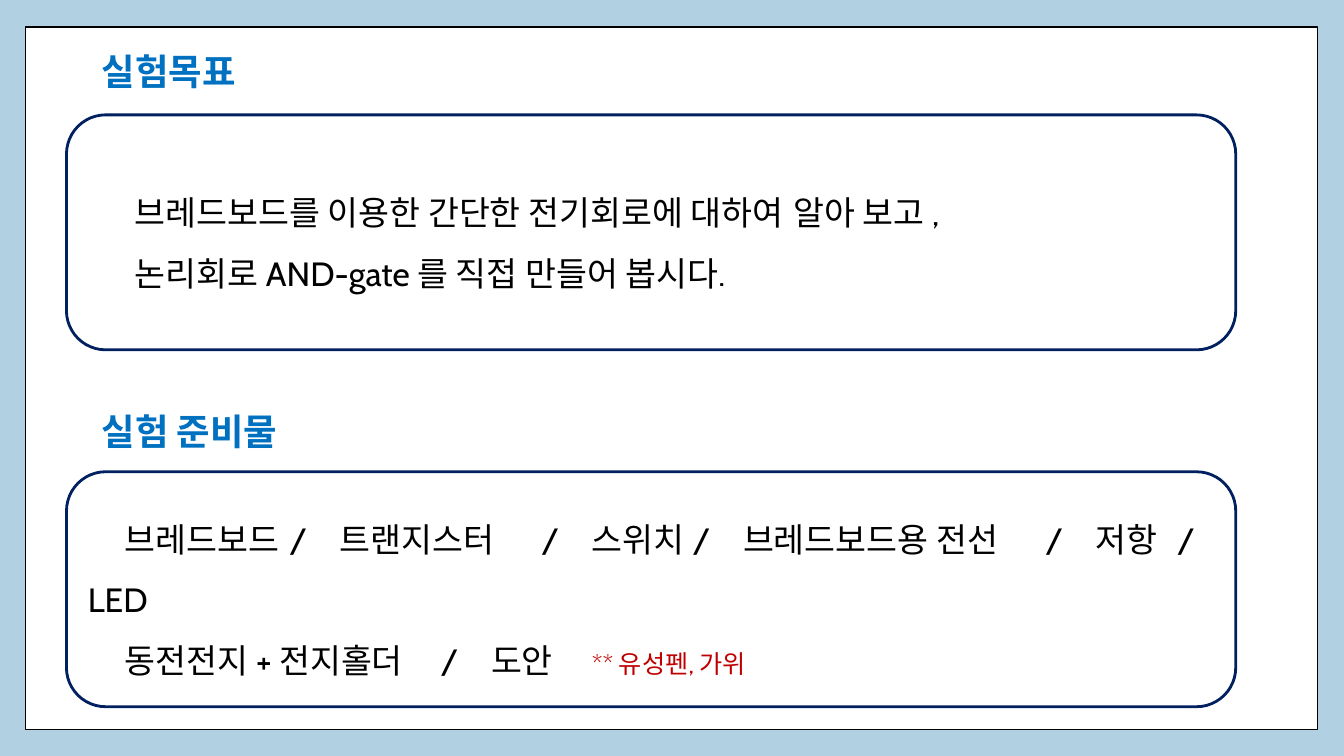
from lxml.etree import SubElement
from pptx import Presentation
from pptx.dml.color import RGBColor
from pptx.enum.shapes import MSO_SHAPE
from pptx.enum.text import MSO_ANCHOR, PP_ALIGN
from pptx.oxml.ns import qn
from pptx.util import Pt


def color(value):
    return RGBColor.from_string(value)


class SlideBuilder:
    font_name = "Cabin"
    heading_format = {"size": Pt(26), "bold": True}
    body_format = {"size": Pt(24)}
    note_format = {"size": Pt(18)}

    def __init__(self, slide):
        self.slide = slide

    def background(self, fill):
        self.slide.background.fill.solid()
        self.slide.background.fill.fore_color.rgb = color(fill)

    def run(self, paragraph, text, font_color, font_format):
        run = paragraph.add_run()
        run.text = text
        run.font.name = self.font_name
        run.font.color.rgb = color(font_color)
        for name, value in font_format.items():
            setattr(run.font, name, value)
        east_asian = SubElement(run.font._element, qn("a:ea"))
        east_asian.set("typeface", self.font_name)

    def box(self, kind, left, top, width, height, line, line_width):
        shape = self.slide.shapes.add_shape(
            kind, Pt(left), Pt(top), Pt(width), Pt(height))
        shape.shadow.inherit = False
        shape.fill.solid()
        shape.fill.fore_color.rgb = color("FFFFFF")
        shape.line.color.rgb = color(line)
        shape.line.width = Pt(line_width)
        return shape

    def heading(self, top, width, text):
        shape = self.slide.shapes.add_textbox(
            Pt(65.5), Pt(top), Pt(width), Pt(34.6))
        frame = shape.text_frame
        frame_format = {"word_wrap": True, "margin_left": Pt(7.2), "margin_right": Pt(7.2),
                        "margin_top": Pt(7.2), "margin_bottom": Pt(7.2)}
        for name, value in frame_format.items():
            setattr(frame, name, value)
        self.run(frame.paragraphs[0], text, "0070C0", self.heading_format)

    def panel(self, top, indent, lines):
        shape = self.box(MSO_SHAPE.ROUNDED_RECTANGLE, 47.5, top, 835.2, 167.8, "002060", 2)
        frame = shape.text_frame
        frame.word_wrap = True
        frame.vertical_anchor = MSO_ANCHOR.MIDDLE
        for index, (text, note, tab_stops) in enumerate(lines):
            paragraph = frame.add_paragraph() if index else frame.paragraphs[0]
            paragraph.alignment = PP_ALIGN.LEFT
            paragraph.line_spacing = 1.5
            self.indent(paragraph, indent, tab_stops)
            self.run(paragraph, text, "000000", self.body_format)
            if note:
                self.run(paragraph, note, "C00000", self.note_format)

    def indent(self, paragraph, indent, tab_stops):
        properties = paragraph._p.get_or_add_pPr()
        properties.set("marL", "0")
        properties.set("indent", str(Pt(indent)))
        if tab_stops:
            tab_list = SubElement(properties, qn("a:tabLst"))
            for position in tab_stops:
                tab = SubElement(tab_list, qn("a:tab"))
                tab.set("pos", str(Pt(position)))
                tab.set("algn", "l")


def main():
    presentation = Presentation()
    presentation.slide_width = Pt(960)
    presentation.slide_height = Pt(540)
    builder = SlideBuilder(presentation.slides.add_slide(presentation.slide_layouts[6]))
    builder.background("B1D1E3")
    builder.box(MSO_SHAPE.RECTANGLE, 18, 19.4, 923, 501.8, "000000", 1)
    builder.heading(28.1, 141.1, "실험목표")
    builder.panel(82.1, 33.5, [
        ("브레드보드를 이용한 간단한 전기회로에 대하여\t알아 보고 ,", "", [515]),
        ("논리회로 AND-gate 를 직접 만들어 봅시다.", "", []),
    ])
    builder.heading(285.1, 165.6, "실험 준비물")
    builder.panel(337, 26.5, [
        ("브레드보드\t/\t트랜지스터\t/\t스위치\t/\t브레드보드용 전선\t/\t저항\t/ LED", "",
         [157, 191, 321, 351, 436, 465, 661, 690, 754]),
        ("동전전지 + 전지홀더\t/\t도안\t", "** 유성펜, 가위", [258, 287, 371]),
    ])
    presentation.save("out.pptx")


if __name__ == "__main__":
    main()
